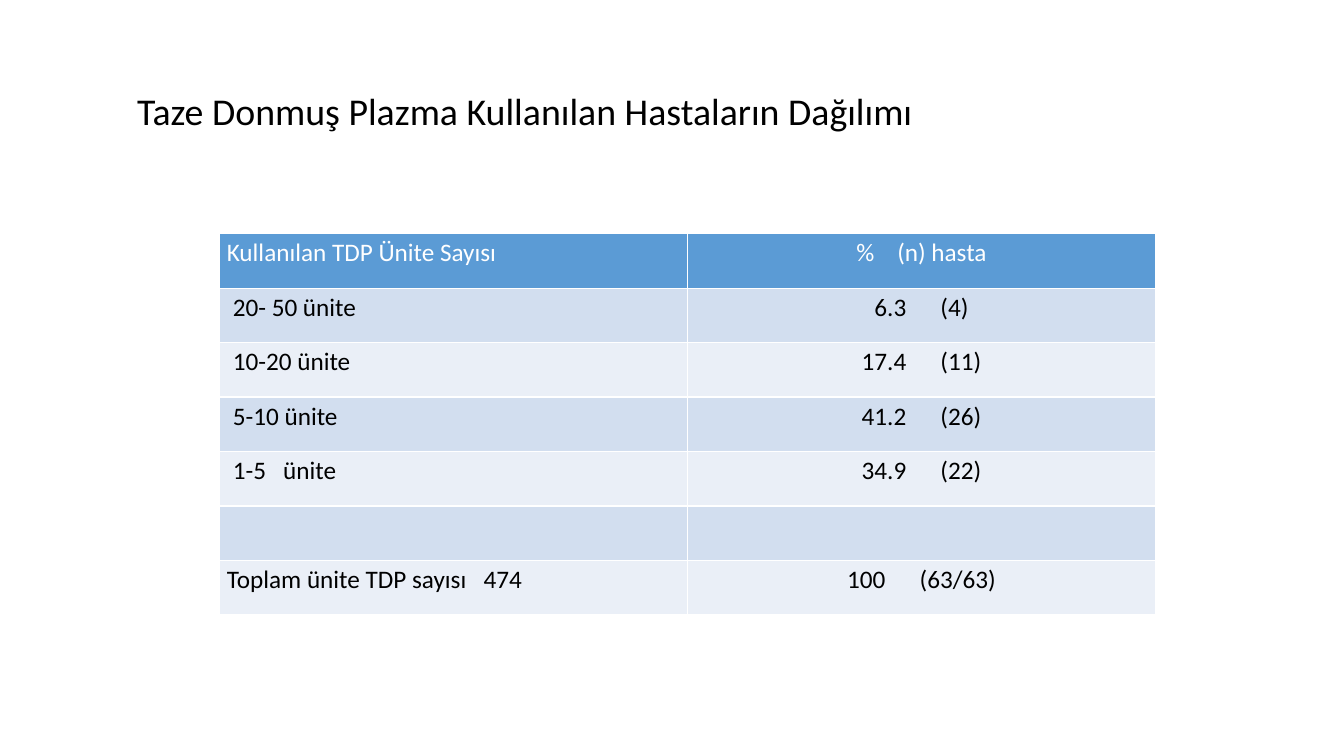
import pptx
import pptx.dml.color
import pptx.enum.text
import pptx.util

WIDTH, HEIGHT = 13.33, 7.5
FONT = "Calibri"
BLACK, WHITE = "000000", "FFFFFF"
HEADER_FILL = "5B9BD5"
BAND_FILLS = ("EAEFF7", "D2DEEF")
ROW_HEIGHT, COLUMN_WIDTH = 0.54, 4.64
CELL_MARGIN, ROW_INDENT = 0.07, 0.06
HEADER_GAP, VALUE_GAP, UNIT_GAP = 12.2, 20.3, 8.1

ROWS = (
    (("Kullanılan TDP Ünite Sayısı",), ("%", "(n) hasta")),
    (("20- 50 ünite",), ("6.3", "(4)")),
    (("10-20 ünite",), ("17.4", "(11)")),
    (("5-10 ünite",), ("41.2", "(26)")),
    (("1-5", "ünite"), ("34.9", "(22)")),
    ((), ()),
    (("Toplam ünite TDP sayısı", "474"), ("100", "(63/63)")),
)


def color(value):
    return pptx.dml.color.RGBColor.from_string(value)


def add_span(para, text, size, tint, gap=0):
    span = para.add_run()
    span.text = text
    span.font.name = FONT
    span.font.size = pptx.util.Pt(size)
    span.font.bold = False
    span.font.color.rgb = color(tint)
    if gap:
        span.font._element.set("spc", str(round(gap * 100)))


def add_title(page, text):
    box = page.shapes.add_textbox(
        pptx.util.Inches(WIDTH * 0.069), pptx.util.Inches(0.4),
        pptx.util.Inches(11.5), pptx.util.Inches(1.45))
    frame = box.text_frame
    frame.word_wrap = True
    frame.vertical_anchor = pptx.enum.text.MSO_ANCHOR.MIDDLE
    frame.margin_left = pptx.util.Inches(0.44)
    para = frame.paragraphs[0]
    para.line_spacing = 0.9
    add_span(para, text, 27, BLACK)


def fill_cell(cell, parts, fill, tint, gap, indent, centered):
    cell.fill.solid()
    cell.fill.fore_color.rgb = color(fill)
    cell.margin_left = pptx.util.Inches(CELL_MARGIN + indent)
    cell.margin_right = pptx.util.Inches(CELL_MARGIN)
    cell.margin_top = cell.margin_bottom = pptx.util.Inches(0.04)
    para = cell.text_frame.paragraphs[0]
    if centered:
        para.alignment = pptx.enum.text.PP_ALIGN.CENTER
    for index, part in enumerate(parts):
        if index:
            add_span(para, " ", 18, tint, gap)
        add_span(para, part, 18, tint)


def add_unit_table(page, rows):
    columns = len(rows[0])
    table = page.shapes.add_table(
        len(rows), columns, pptx.util.Inches(2.18), pptx.util.Inches(2.32),
        pptx.util.Inches(COLUMN_WIDTH * columns),
        pptx.util.Inches(ROW_HEIGHT * len(rows))).table
    for row, cells in enumerate(rows):
        header = row == 0
        fill = HEADER_FILL if header else BAND_FILLS[row % 2]
        tint = WHITE if header else BLACK
        inner = 0 < row < len(rows) - 1
        value_gap = HEADER_GAP if header else VALUE_GAP
        for column, parts in enumerate(cells):
            values = column == 1
            fill_cell(table.cell(row, column), parts, fill, tint,
                      value_gap if values else UNIT_GAP,
                      ROW_INDENT if inner and not values else 0, values)


def main():
    deck = pptx.Presentation()
    deck.slide_width = pptx.util.Inches(WIDTH)
    deck.slide_height = pptx.util.Inches(HEIGHT)
    page = deck.slides.add_slide(deck.slide_layouts[6])
    add_title(page, "Taze Donmuş Plazma Kullanılan Hastaların Dağılımı")
    add_unit_table(page, ROWS)
    deck.save("out.pptx")


if __name__ == "__main__":
    main()
